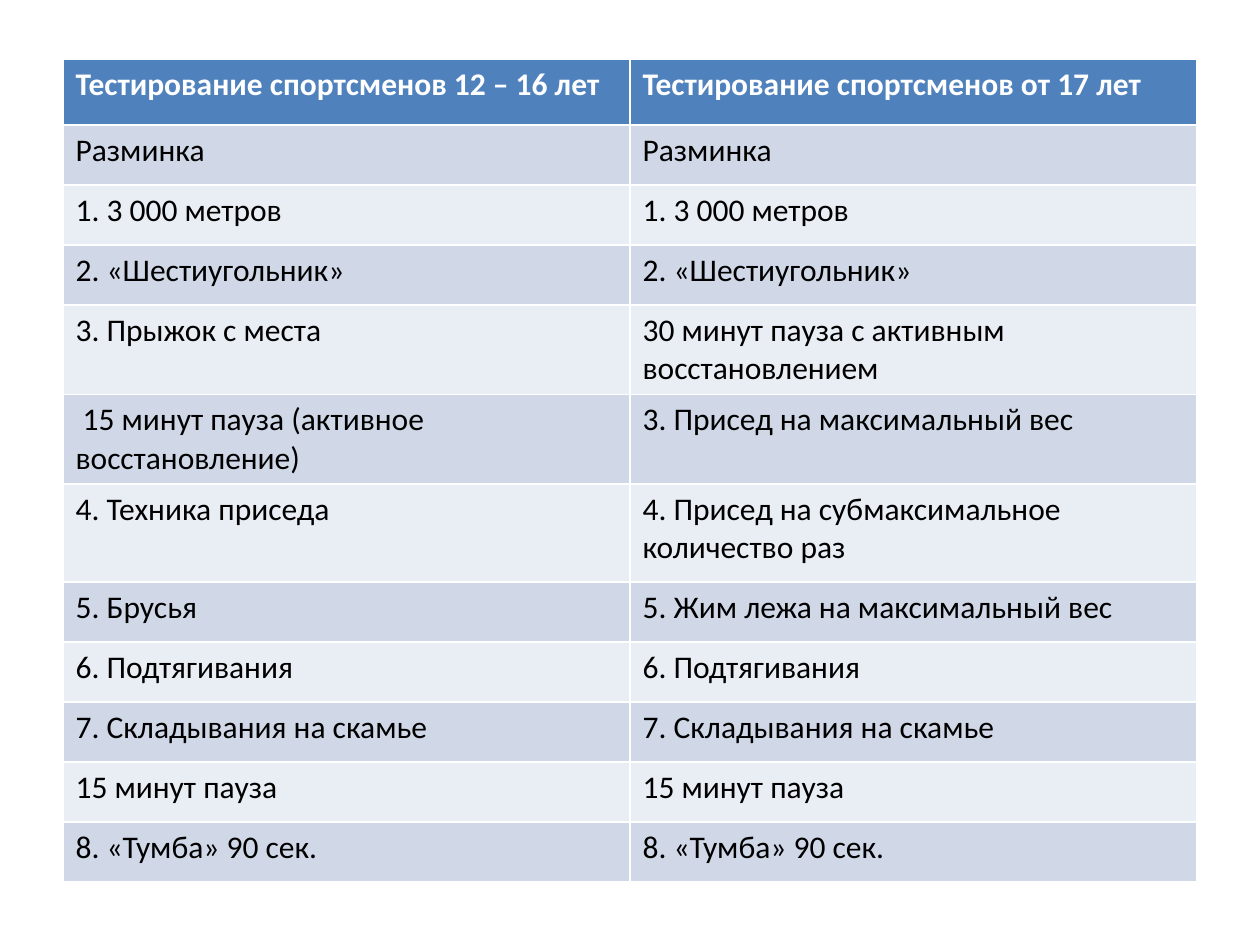
"""Build a slide with a table of fitness tests for two age groups."""
from pptx import Presentation
from pptx.dml.color import RGBColor
from pptx.util import Emu, Pt

ROWS = [
    (66, "Тестирование спортсменов 12 – 16 лет", "Тестирование спортсменов от 17 лет"),
    (60, "Разминка", "Разминка"),
    (60, "1. 3 000 метров", "1. 3 000 метров"),
    (60, "2. «Шестиугольник»", "2. «Шестиугольник»"),
    (88, "3. Прыжок с места", "30 минут пауза с активным восстановлением"),
    (83, " 15 минут пауза (активное восстановление)", "3. Присед на максимальный вес"),
    (98, "4. Техника приседа", "4. Присед на субмаксимальное количество раз"),
    (60, "5. Брусья", "5. Жим лежа на максимальный вес"),
    (60, "6. Подтягивания", "6. Подтягивания"),
    (60, "7. Складывания на скамье", "7. Складывания на скамье"),
    (60, "15 минут пауза", "15 минут пауза"),
    (60, "8. «Тумба» 90 сек.", "8. «Тумба» 90 сек."),
]
LEFT, TOP, COLUMN_WIDTH = 63, 59, 567
HEADER_FILL, BAND_FILLS = "4F81BD", ("E9EDF4", "D0D8E8")
HEADER_FONT = {"name": "Calibri", "size": Pt(18), "bold": True}
BODY_FONT = {**HEADER_FONT, "bold": False}


def px(length):
    return Emu(round(length * 914400 / 126))


def color(code):
    return RGBColor.from_string(code)


def fill_cell(cell, text, fill, text_color, font_format):
    cell.fill.solid()
    cell.fill.fore_color.rgb = color(fill)
    span = cell.text_frame.paragraphs[0].add_run()
    span.text = text
    span.font.color.rgb = color(text_color)
    for name, value in font_format.items():
        setattr(span.font, name, value)


def add_test_table(page):
    height = sum(row[0] for row in ROWS)
    table = page.shapes.add_table(
        len(ROWS), 2, px(LEFT), px(TOP), px(2 * COLUMN_WIDTH), px(height)
    ).table
    for column in table.columns:
        column.width = px(COLUMN_WIDTH)
    for index, (row_height, *texts) in enumerate(ROWS):
        table.rows[index].height = px(row_height)
        if index == 0:
            style = HEADER_FILL, "FFFFFF", HEADER_FONT
        else:
            style = BAND_FILLS[index % 2], "000000", BODY_FONT
        for cell, text in zip(table.rows[index].cells, texts):
            fill_cell(cell, text, *style)


def main():
    deck = Presentation()
    deck.slide_width, deck.slide_height = px(1260), px(945)
    page = deck.slides.add_slide(deck.slide_layouts[6])
    add_test_table(page)
    deck.save("out.pptx")


if __name__ == "__main__":
    main()
